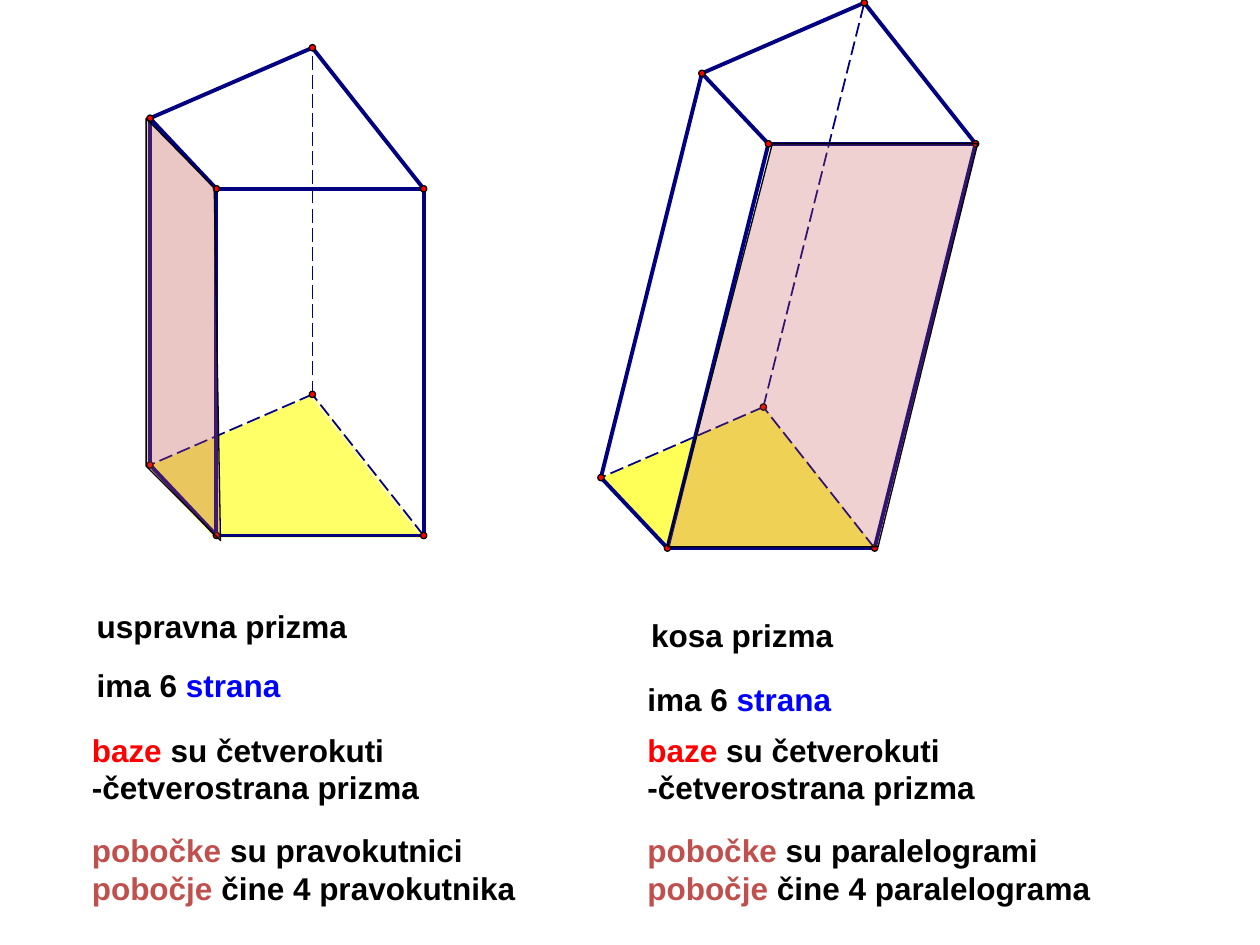
import lxml.etree
import pptx
import pptx.dml.color
import pptx.enum.dml
import pptx.enum.shapes
import pptx.enum.text
import pptx.oxml.ns
import pptx.util

Pt = pptx.util.Pt
qn = pptx.oxml.ns.qn

COLORS = {
    "black": "000000", "navy": "000080", "yellow": "FFFF00",
    "red": "FF0000", "blue": "0000FF", "brick": "C0504D",
}

# Base corners measured from the left one: left, front left, front right, back
BASE = [(0, 0), (38, 40.3), (156.4, 40.3), (92.8, -40.3)]
BACK = 3
DOT = 3.6


def rgb(name):
    return pptx.dml.color.RGBColor.from_string(COLORS[name])


def shift(points, dx, dy):
    return [(x + dx, y + dy) for x, y in points]


def add_face(page, points, color, opacity, outline=None):
    """Draw a see-through polygon; opacity is a percentage."""
    corners = [(Pt(x), Pt(y)) for x, y in points]
    builder = page.shapes.build_freeform(*corners[0])
    builder.add_line_segments(corners[1:], close=True)
    face = builder.convert_to_shape()
    face.shadow.inherit = False
    face.fill.solid()
    face.fill.fore_color.rgb = rgb(color)
    fill_color = face._element.spPr.find(qn("a:solidFill"))[0]
    alpha = lxml.etree.SubElement(fill_color, qn("a:alpha"))
    alpha.set("val", str(opacity * 1000))
    if outline:
        face.line.color.rgb = rgb(outline)
        face.line.width = Pt(0.75)
    else:
        face.line.fill.background()


def add_edge(page, start, end, hidden=False):
    edge = page.shapes.add_connector(
        pptx.enum.shapes.MSO_CONNECTOR.STRAIGHT,
        *(Pt(value) for value in (*start, *end)))
    edge.line.color.rgb = rgb("navy")
    edge.line.width = Pt(1 if hidden else 2.25)
    if hidden:
        edge.line.dash_style = pptx.enum.dml.MSO_LINE.LONG_DASH
    lxml.etree.SubElement(edge._element.spPr, qn("a:effectLst"))


def add_vertex(page, x, y):
    dot = page.shapes.add_shape(
        pptx.enum.shapes.MSO_SHAPE.OVAL,
        Pt(x - DOT / 2), Pt(y - DOT / 2), Pt(DOT), Pt(DOT))
    dot.shadow.inherit = False
    dot.fill.solid()
    dot.fill.fore_color.rgb = rgb("red")
    dot.line.color.rgb = rgb("black")
    dot.line.width = Pt(0)


def add_prism(page, origin, rise, opacity, ghost):
    """Draw a prism; ghost is the offset of the second layer under its base."""
    bottom = shift(BASE, *origin)
    top = shift(bottom, *rise)
    add_face(page, shift(bottom, *ghost), "yellow", opacity)
    add_face(page, bottom, "yellow", opacity)
    for i in range(len(BASE)):
        j = (i + 1) % len(BASE)
        add_edge(page, bottom[i], bottom[j], hidden=BACK in (i, j))
        add_edge(page, top[i], top[j])
        add_edge(page, bottom[i], top[i], hidden=i == BACK)
    for x, y in bottom + top:
        add_vertex(page, x, y)


def add_caption(page, left, top, width, height, spans):
    box = page.shapes.add_textbox(Pt(left), Pt(top), Pt(width), Pt(height))
    frame = box.text_frame
    frame.word_wrap = True
    frame.auto_size = pptx.enum.text.MSO_AUTO_SIZE.SHAPE_TO_FIT_TEXT
    para = frame.paragraphs[0]
    para.font.name = "Arial"
    para.font.size = Pt(18)
    para.font.bold = True
    for text, color in spans:
        span = para.add_run()
        span.text = text
        span.font.color.rgb = rgb(color)


def add_description(page, name, sides, left, name_at, sides_at, widths):
    """Write the four captions of a prism; widths run from top to bottom."""
    faces = [("ima 6 ", "black"), ("strana", "blue")]
    bases = [("baze", "red"), (" su četverokuti -četverostrana prizma", "black")]
    lateral = [
        ("pobočke", "brick"), (f" su {sides[0]} ", "black"),
        ("pobočje", "brick"), (f" čine 4 {sides[1]}", "black"),
    ]
    add_caption(page, *name_at, widths[0], 29, [(name, "black")])
    add_caption(page, *sides_at, widths[1], 29, faces)
    add_caption(page, left, 414, widths[2], 50.4, bases)
    add_caption(page, left, 471.6, widths[3], 50.4, lateral)


def main():
    deck = pptx.Presentation()
    deck.slide_width, deck.slide_height = Pt(720), Pt(540)
    page = deck.slides.add_slide(deck.slide_layouts[6])

    add_prism(page, (343.4, 272.9), (57.7, -231), 41, (0.7, 0))
    add_prism(page, (85.7, 265.7), (0, -198.1), 36, (-1.4, 1.4))

    add_description(
        page, "uspravna prizma", ("pravokutnici", "pravokutnika"), 45.4,
        (48.2, 343.4), (48.2, 377.3), (251.3, 280, 296, 275))
    add_description(
        page, "kosa prizma", ("paralelogrami", "paralelograma"), 362.9,
        (365, 348.5), (362.9, 385.2), (267, 280, 296, 296))

    add_face(page, [(83.5, 67.7), (83.5, 266.4), (126, 308.9), (122.4, 107.3)],
             "brick", 32, "black")
    add_face(page, [(441.4, 82.1), (558.7, 82.1), (501.8, 312.5), (381.6, 312.5)],
             "brick", 26, "black")
    deck.save("out.pptx")


if __name__ == "__main__":
    main()
